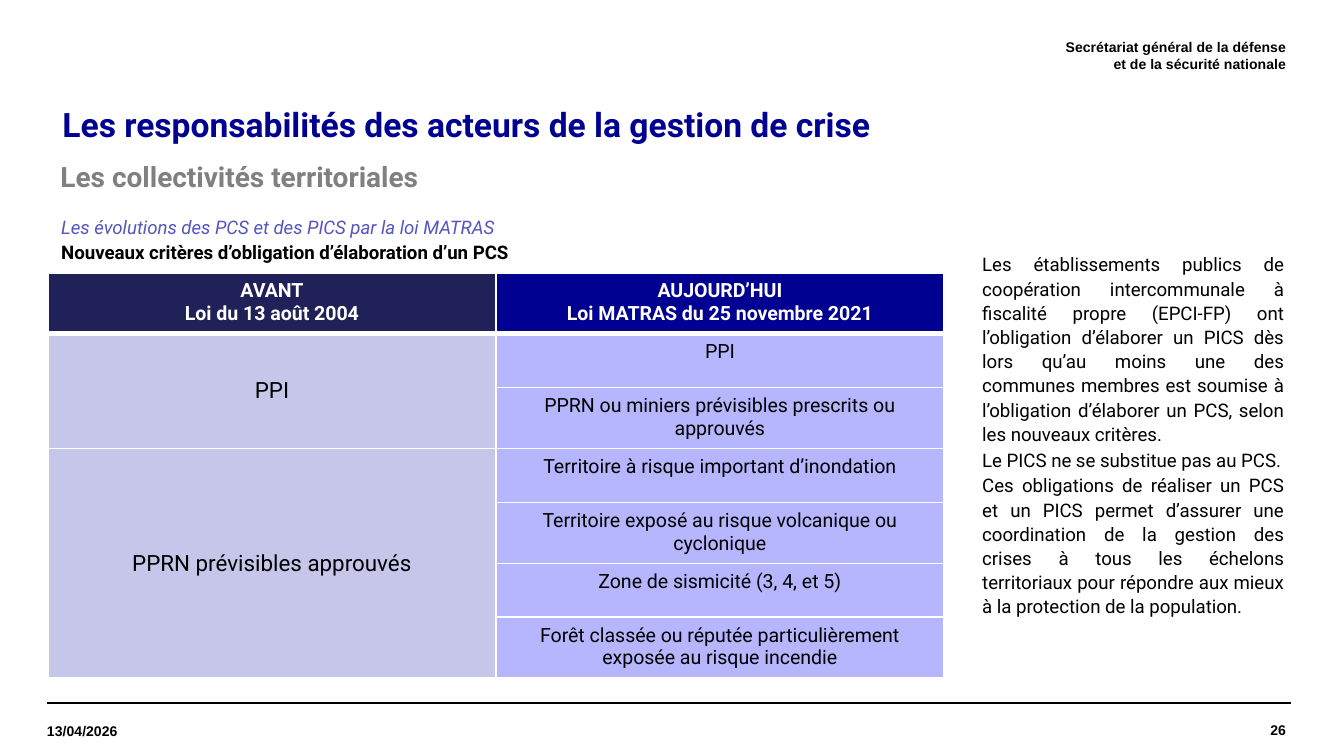
from dataclasses import dataclass

from lxml.etree import SubElement
from pptx import Presentation
from pptx.dml.color import RGBColor as Rgb
from pptx.enum.shapes import MSO_CONNECTOR as Connector
from pptx.enum.text import MSO_ANCHOR as Anchor, MSO_AUTO_SIZE as AutoSize, PP_ALIGN as Align
from pptx.oxml.ns import qn
from pptx.util import Emu, Pt

SCALE = 9144000 / 1344


@dataclass(frozen=True)
class Theme:
    """Colours, fonts and type sizes of the slide."""
    black: str = "000000"
    white: str = "FFFFFF"
    grey: str = "808080"
    blue: str = "000091"
    violet: str = "5555C1"
    navy: str = "21215A"
    before_fill: str = "C6C6EA"
    today_fill: str = "B6B6FF"
    text_font: str = "Roboto"
    edge_font: str = "Arial"
    title: float = 18
    subtitle: float = 15
    table_large: float = 12
    table: float = 10.5
    body: float = 10
    edge: float = 7.5


THEME = Theme()
EDGE = {"name": THEME.edge_font, "size": THEME.edge, "bold": True}
BODY = {"size": THEME.body}

SIDE_TEXTS = [
    "Les établissements publics de coopération intercommunale à fiscalité propre (EPCI-FP) ont "
    "l’obligation d’élaborer un PICS dès lors qu’au moins une des communes membres est soumise à "
    "l’obligation d’élaborer un PCS, selon les nouveaux critères.",
    "Le PICS ne se substitue pas au PCS.",
    "Ces obligations de réaliser un PCS et un PICS permet d’assurer une coordination de la gestion "
    "des crises à tous les échelons territoriaux pour répondre aux mieux à la protection de la "
    "population.",
]
HEADERS = [
    (["AVANT", "Loi du 13 août 2004"], THEME.navy),
    (["AUJOURD’HUI", "Loi MATRAS du 25 novembre 2021"], THEME.blue),
]
CRITERIA = [
    ("PPI", ["PPI", "PPRN ou miniers prévisibles prescrits ou approuvés"]),
    ("PPRN prévisibles approuvés", [
        "Territoire à risque important d’inondation",
        "Territoire exposé au risque volcanique ou cyclonique",
        "Zone de sismicité (3, 4, et 5)",
        "Forêt classée ou réputée particulièrement exposée au risque incendie",
    ]),
]
ROW_HEIGHTS = [59] + [54, 61] * 3


def px(*lengths):
    """Turn pixel lengths into EMU."""
    return [Emu(round(length * SCALE)) for length in lengths]


def apply_format(target, values):
    """Set every attribute of the target from a dict."""
    for name, value in values.items():
        setattr(target, name, value)


def style_font(font, size, color=THEME.black, **values):
    """Give a font its size, colour and other values."""
    apply_format(font, {"name": THEME.text_font, "size": Pt(size), **values})
    font.color.rgb = Rgb.from_string(color)


def write(frame, texts, font, layout):
    """Fill a text frame with one formatted paragraph per text."""
    for index, text in enumerate(texts):
        para = frame.paragraphs[0] if index == 0 else frame.add_paragraph()
        apply_format(para, layout)
        if index == 0:
            para.space_before = Pt(0)
        span = para.add_run()
        span.text = text
        style_font(span.font, **font)


def add_text(slide, place, texts, font, layout, frame_format=None):
    """Add a wrapping text box."""
    frame = slide.shapes.add_textbox(*px(*place)).text_frame
    apply_format(frame, {"word_wrap": True, **(frame_format or {})})
    write(frame, texts, font, layout)
    return frame


def add_edge_text(slide, place, texts, align):
    """Add small bold text without insets in the page margin."""
    sides = ("left", "top", "right", "bottom")
    frame_format = {f"margin_{side}": 0 for side in sides}
    frame_format["vertical_anchor"] = Anchor.MIDDLE
    add_text(slide, place, texts, EDGE, {"alignment": align}, frame_format)


def fill_placeholder(box, place, text, font, layout, anchor):
    """Move a placeholder and give it one line without a bullet."""
    apply_format(box, dict(zip(("left", "top", "width", "height"), px(*place))))
    frame = box.text_frame
    apply_format(frame, {"vertical_anchor": anchor, "auto_size": AutoSize.NONE})
    properties = frame.paragraphs[0]._p.get_or_add_pPr()
    properties.set("marL", "0")
    properties.set("indent", "0")
    SubElement(properties, qn("a:buNone"))
    write(frame, [text], font, {"alignment": Align.LEFT, **layout})


def add_rule(slide, left, right, top):
    """Add a thin horizontal line."""
    line = slide.shapes.add_connector(Connector.STRAIGHT, *px(left, top, right, top))
    line.line.width = Pt(0.8)
    line.line.color.rgb = Rgb.from_string(THEME.black)
    SubElement(line._element.spPr, qn("a:effectLst"))


def style_cell(cell, fill, row):
    """Give a cell white borders and a fill."""
    properties = cell._tc.get_or_add_tcPr()
    thick = {(0, "lnB"), (1, "lnT")}
    for tag in ("lnL", "lnR", "lnT", "lnB"):
        width = Pt(3 if (row, tag) in thick else 1)
        border = SubElement(properties, qn(f"a:{tag}"), w=str(width))
        solid = SubElement(border, qn("a:solidFill"))
        SubElement(solid, qn("a:srgbClr"), val=THEME.white)
    cell.fill.solid()
    cell.fill.fore_color.rgb = Rgb.from_string(fill)


def add_criteria_table(slide):
    """Add the table comparing the criteria before and today."""
    place = px(48, 273, 896, sum(ROW_HEIGHTS))
    table = slide.shapes.add_table(len(ROW_HEIGHTS), 2, *place).table
    table.horz_banding = False
    for row, height in zip(table.rows, px(*ROW_HEIGHTS)):
        row.height = height
    centred = {"alignment": Align.CENTER}
    for column, (texts, fill) in enumerate(HEADERS):
        cell = table.cell(0, column)
        style_cell(cell, fill, 0)
        font = {"size": THEME.table, "color": THEME.white, "bold": True}
        write(cell.text_frame, texts, font, centred)
    row = 1
    for before, todays in CRITERIA:
        first = table.cell(row, 0)
        first.merge(table.cell(row + len(todays) - 1, 0))
        first.vertical_anchor = Anchor.MIDDLE
        write(first.text_frame, [before], {"size": THEME.table_large, "bold": False}, centred)
        for today in todays:
            style_cell(table.cell(row, 0), THEME.before_fill, row)
            cell = table.cell(row, 1)
            style_cell(cell, THEME.today_fill, row)
            write(cell.text_frame, [today], {"size": THEME.table, "bold": False}, centred)
            row += 1


def main():
    """Build and save the slide."""
    deck = Presentation()
    deck.slide_width, deck.slide_height = px(1344, 756)
    slide = deck.slides.add_slide(deck.slide_layouts[1])
    title, subtitle = slide.placeholders
    for left, right in ((47, 1286), (52, 1291)):
        add_rule(slide, left, right, 703)
    fill_placeholder(title, (49, 101, 1238, 52),
                     "Les responsabilités des acteurs de la gestion de crise",
                     {"size": THEME.title, "color": THEME.blue, "bold": True},
                     {"line_spacing": 0.9}, Anchor.MIDDLE)
    fill_placeholder(subtitle, (47, 153, 1238, 36), "Les collectivités territoriales",
                     {"size": THEME.subtitle, "color": THEME.grey, "bold": True},
                     {"space_after": Pt(8)}, Anchor.TOP)
    justified = {"alignment": Align.JUSTIFY, "line_spacing": 1.08}
    intro = add_text(slide, (48, 208, 1249, 187),
                     ["Les évolutions des PCS et des PICS par la loi MATRAS",
                      "Nouveaux critères d’obligation d’élaboration d’un PCS"],
                     {**BODY, "bold": True}, justified)
    style_font(intro.paragraphs[0].runs[0].font, THEME.body, THEME.violet,
               italic=True, bold=False)
    add_criteria_table(slide)
    add_text(slide, (969, 245, 328, 450), SIDE_TEXTS, BODY,
             {**justified, "space_before": Pt(0.9)})
    add_edge_text(slide, (422, 29, 864, 52),
                  ["Secrétariat général de la défense", "et de la sécurité nationale"],
                  Align.RIGHT)
    add_edge_text(slide, (47, 705, 177, 52), ["13/04/2026"], Align.LEFT)
    add_edge_text(slide, (1087, 704, 199, 52), ["26"], Align.RIGHT)
    deck.save("out.pptx")


if __name__ == "__main__":
    main()
